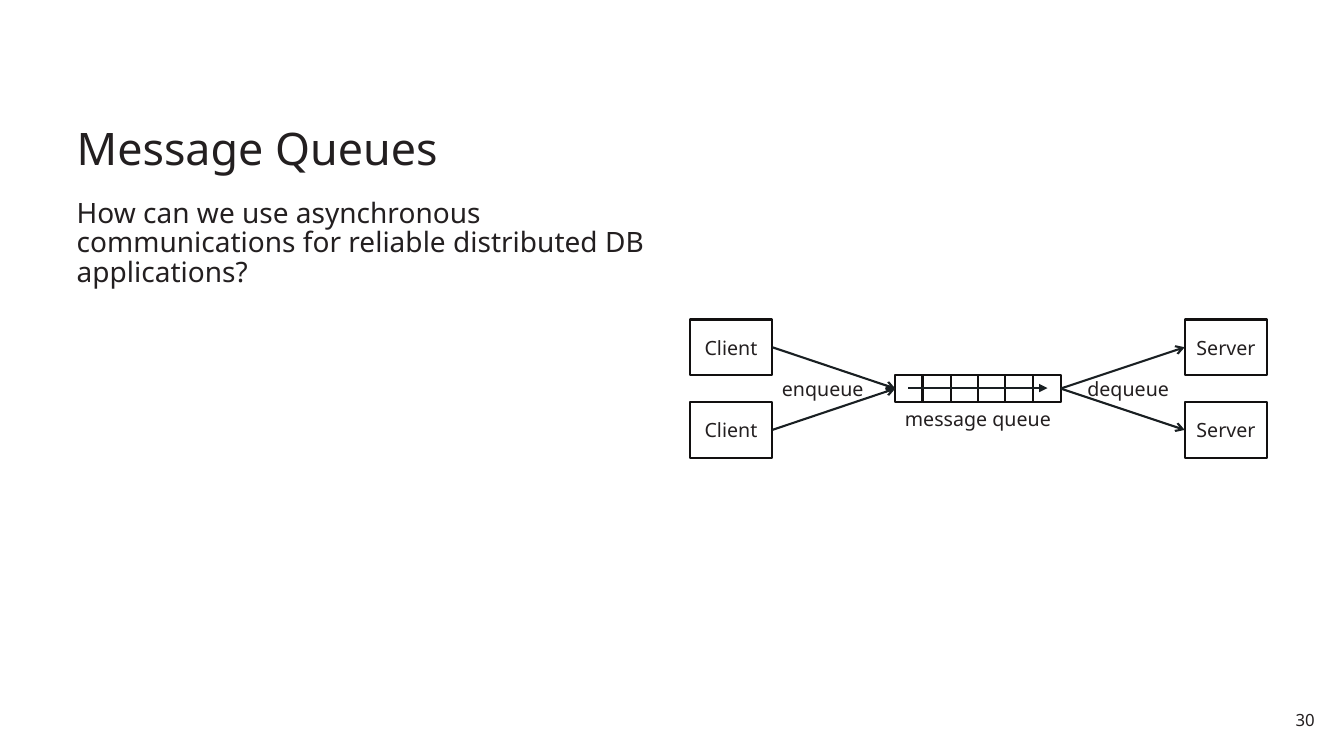
from lxml import etree
from pptx import Presentation
from pptx import util as u
from pptx.dml.color import RGBColor
from pptx.enum import shapes, text
from pptx.oxml.ns import qn

EMU_PER_PX = 9144
FONT = "Noto Sans"
COLORS = {"text": "231F20", "border": "121010", "arrow": "191F22", "fill": "FFFFFF"}
LEFT, RIGHT = 3, 1


def px(*lengths):
    return [u.Emu(length * EMU_PER_PX) for length in lengths]


def color(name):
    return RGBColor.from_string(COLORS[name])


def write(shape, words, size, align, anchor, insets, wrap=True):
    frame = shape.text_frame
    frame.auto_size = text.MSO_AUTO_SIZE.NONE
    frame.word_wrap = wrap
    frame.vertical_anchor = anchor
    frame.margin_left, frame.margin_top = px(*insets)
    frame.margin_right, frame.margin_bottom = px(*insets)
    paragraph = frame.paragraphs[0]
    paragraph.text = words
    paragraph.alignment = align
    paragraph.space_before = u.Pt(0)
    paragraph.font.name = FONT
    paragraph.font.size = u.Pt(size)
    paragraph.font.color.rgb = color("text")
    return paragraph


def fill_placeholder(placeholder, box, words, size, anchor, spacing):
    placeholder.left, placeholder.top, placeholder.width, placeholder.height = px(*box)
    properties = placeholder.text_frame.paragraphs[0]._p.get_or_add_pPr()
    properties.set("marL", "0")
    properties.set("indent", "0")
    etree.SubElement(properties, qn("a:buNone"))
    paragraph = write(placeholder, words, size, text.PP_ALIGN.LEFT, anchor, (8, 4))
    paragraph.line_spacing = spacing


def add_box(slide, box, label=None):
    shape = slide.shapes.add_shape(shapes.MSO_SHAPE.RECTANGLE, *px(*box))
    shape.shadow.inherit = False
    shape.fill.solid()
    shape.fill.fore_color.rgb = color("fill")
    shape.line.color.rgb = color("border")
    shape.line.width = u.Pt(1.5)
    if label:
        write(shape, label, 14, text.PP_ALIGN.CENTER, text.MSO_ANCHOR.MIDDLE, (0, 0), False)
    return shape


def add_label(slide, box, words, size=14, align=text.PP_ALIGN.CENTER, insets=(10, 5)):
    label = slide.shapes.add_textbox(*px(*box))
    write(label, words, size, align, text.MSO_ANCHOR.TOP, insets, False)


def add_arrow(slide, head, ends=(0, 0, 0, 0)):
    arrow = slide.shapes.add_connector(shapes.MSO_CONNECTOR.STRAIGHT, *px(*ends))
    arrow.line.color.rgb = color("arrow")
    arrow.line.width = u.Pt(1.5)
    etree.SubElement(arrow.line._get_or_add_ln(), qn("a:tailEnd"), type=head)
    etree.SubElement(arrow._element.spPr, qn("a:effectLst"))
    return arrow


def join(slide, source, target):
    arrow = add_arrow(slide, "arrow")
    arrow.begin_connect(source, LEFT)
    arrow.end_connect(target, RIGHT)


def add_queue(slide, left, top, width, cell_count):
    edges = [round(left + width * i / cell_count) for i in range(cell_count + 1)]
    cells = [
        add_box(slide, (start, top, end - start, 27))
        for start, end in zip(edges, edges[1:])
    ]
    add_arrow(slide, "triangle", (left + 13, top + 13, left + width - 13, top + 13))
    return cells


def main():
    presentation = Presentation()
    presentation.slide_width, presentation.slide_height = px(1333, 750)
    slide = presentation.slides.add_slide(presentation.slide_layouts[1])
    fill_placeholder(slide.shapes.title, (68, 76, 1197, 102), "Message Queues",
                     32, text.MSO_ANCHOR.BOTTOM, 0.9)
    fill_placeholder(
        slide.placeholders[1], (68, 194, 591, 488),
        "How can we use asynchronous communications for reliable distributed DB applications?",
        20, text.MSO_ANCHOR.TOP, 0.88)
    add_label(slide, (1265, 698, 47, 31), "30", 12, text.PP_ALIGN.RIGHT, (8, 6))

    cells = add_queue(slide, 888, 372, 164, 6)
    for top in (317, 399):
        client = add_box(slide, (684, top, 82, 55), "Client")
        server = add_box(slide, (1175, top, 82, 55), "Server")
        join(slide, client, cells[0])
        join(slide, cells[-1], server)

    add_label(slide, (886, 399, 168, 34), "message queue")
    add_label(slide, (765, 369, 102, 34), "enqueue")
    add_label(slide, (1068, 369, 102, 34), "dequeue")
    presentation.save("out.pptx")


if __name__ == "__main__":
    main()
